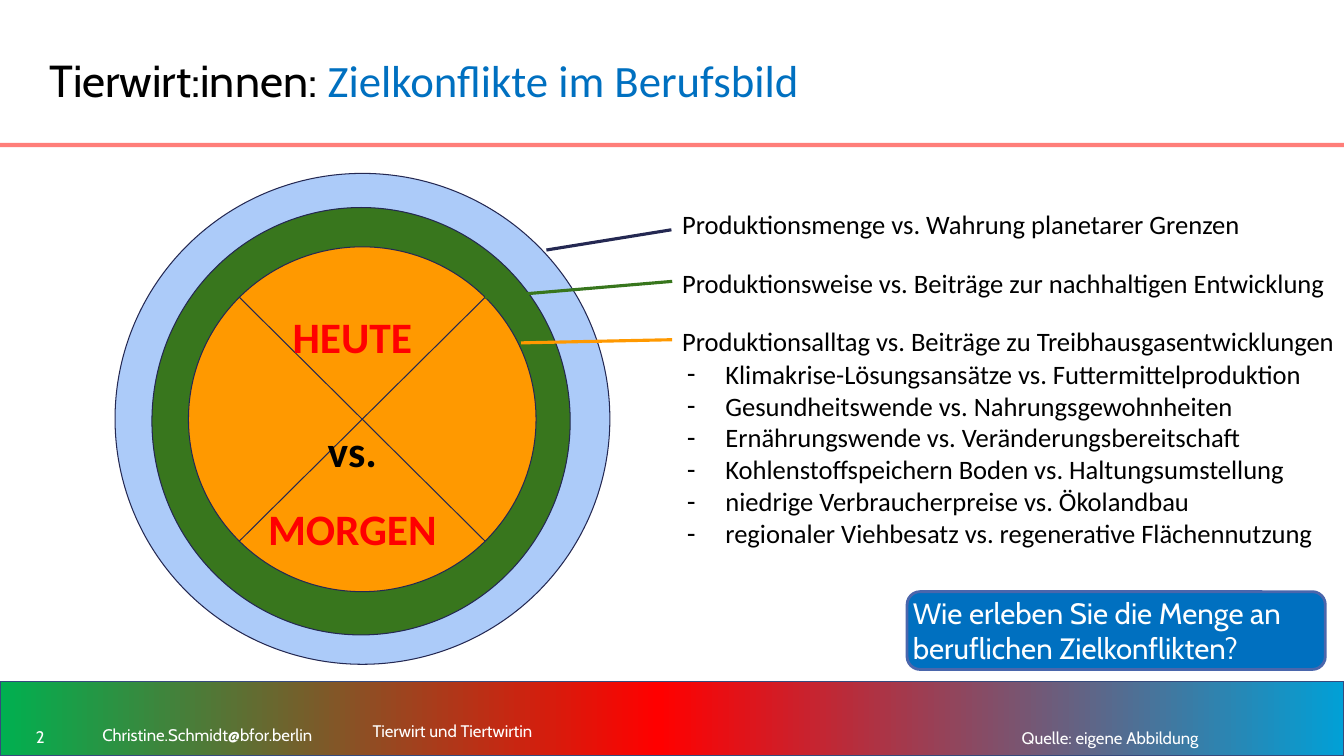
import copy

import pptx
import pptx.dml.color
import pptx.enum.shapes
import pptx.enum.text
import pptx.oxml.ns
import pptx.util
from lxml import etree

Cm = pptx.util.Cm
Pt = pptx.util.Pt
qn = pptx.oxml.ns.qn
FORM = pptx.enum.shapes.MSO_SHAPE
LEFT = pptx.enum.text.PP_ALIGN.LEFT
MID = pptx.enum.text.PP_ALIGN.CENTER
TOP = pptx.enum.text.MSO_ANCHOR.TOP
HALF = pptx.enum.text.MSO_ANCHOR.MIDDLE

TOPICS = [
    "Produktionsmenge vs. Wahrung planetarer Grenzen",
    "Produktionsweise vs. Beiträge zur nachhaltigen Entwicklung",
    "Produktionsalltag vs. Beiträge zu Treibhausgasentwicklungen",
]
GOALS = [
    "Klimakrise-Lösungsansätze vs. Futtermittelproduktion",
    "Gesundheitswende vs. Nahrungsgewohnheiten",
    "Ernährungswende vs. Veränderungsbereitschaft",
    "Kohlenstoffspeichern Boden vs. Haltungsumstellung",
    "niedrige Verbraucherpreise vs. Ökolandbau",
    "regionaler Viehbesatz vs. regenerative Flächennutzung",
]
RAYS = [
    ((13.77, 6.3), (16.92, 5.79), "242852"),
    ((12.22, 7.49), (16.94, 7.09), "38761D"),
    ((13.13, 8.64), (16.94, 8.56), "FF9900"),
]


def tint(code):
    return pptx.dml.color.RGBColor.from_string(code)


def place(item, spot):
    item.left, item.top, item.width, item.height = [Cm(n) for n in spot]


def frame(item, anchor, side=0.25, edge=0.13):
    text = item.text_frame
    text.word_wrap = True
    text.auto_size = pptx.enum.text.MSO_AUTO_SIZE.NONE
    text.vertical_anchor = anchor
    text.margin_left = text.margin_right = Cm(side)
    text.margin_top = text.margin_bottom = Cm(edge)
    return text


def write(para, words, size, font, code, bold=False):
    run = para.add_run()
    run.text = words
    run.font.size = Pt(size)
    run.font.name = font
    run.font.bold = bold
    run.font.color.rgb = tint(code)


def label(slide, spot, words, size, font, code, anchor=HALF, edge=0.13, align=LEFT):
    box = slide.shapes.add_textbox(*[Cm(n) for n in spot])
    para = frame(box, anchor, edge=edge).paragraphs[0]
    para.alignment = align
    write(para, words, size, font, code)
    return para


def shape(slide, form, spot, fill, line=None, width=0.75):
    item = slide.shapes.add_shape(form, *[Cm(n) for n in spot])
    item.shadow.inherit = False
    if fill:
        item.fill.solid()
        item.fill.fore_color.rgb = tint(fill)
    if line:
        item.line.color.rgb = tint(line)
        item.line.width = Pt(width)
    else:
        item.line.fill.background()
    return item


def blend(item, stops):
    item.fill.gradient()
    item.fill.gradient_angle = 0
    group = item._element.spPr.find(".//" + qn("a:gsLst"))
    group.insert(1, copy.deepcopy(group[0]))
    for stop, (place_at, code) in zip(item.fill.gradient_stops, stops):
        stop.position = place_at
        stop.color.rgb = tint(code)


def ray(slide, start, end, code):
    kind = pptx.enum.shapes.MSO_CONNECTOR.STRAIGHT
    line = slide.shapes.add_connector(kind, *[Cm(n) for n in start + end])
    line.line.color.rgb = tint(code)
    line.line.width = Pt(2.25)
    etree.SubElement(line._element.spPr, qn("a:effectLst"))


def dash(para):
    props = para._p.get_or_add_pPr()
    props.set("marL", str(Cm(1.27)))
    props.set("indent", str(-Cm(0.97)))
    etree.SubElement(props, qn("a:buChar")).set("char", "-")


def title(slide):
    head = slide.shapes.title
    place(head, (1, 0.5, 25, 3))
    para = frame(head, HALF).paragraphs[0]
    para.alignment = LEFT
    write(para, "Tierwirt:innen: ", 32, "Cabin", "000000")
    write(para, "Zielkonflikte im Berufsbild", 32, "Calibri", "0070C0")


def goals(slide):
    body = slide.placeholders[1]
    place(body, (16.76, 8.76, 16.61, 5.28))
    text = frame(body, TOP, edge=0.25)
    for rank, words in enumerate(GOALS):
        para = text.add_paragraph() if rank else text.paragraphs[0]
        dash(para)
        para.space_before = Pt(0)
        write(para, words, 19, "Calibri", "000000")


def rings(slide):
    ink = "242852"
    shape(slide, FORM.OVAL, (2.9, 4.37, 12.47, 12.37), "ACCBF9", ink)
    shape(slide, FORM.OVAL, (3.83, 5.23, 10.54, 10.77), "38761D", ink)
    core = shape(slide, FORM.FLOWCHART_SUMMING_JUNCTION,
                 (4.75, 6.22, 8.76, 8.69), "FF9900", ink)
    text = frame(core, HALF, edge=0.25)
    now = text.paragraphs[0]
    then = text.add_paragraph()
    for para in (now, then):
        para.alignment = MID
        para.line_spacing = 1.5
    now._p.get_or_add_pPr().set("marR", str(Cm(0.5)))
    then.space_before = Pt(25)
    write(now, "HEUTE", 31, "Calibri", "FF0000", True)
    write(then, "vs.", 31, "Calibri", "000000", True)
    then.add_line_break()
    write(then, "MORGEN", 31, "Calibri", "FF0000", True)


def ask(slide):
    box = shape(slide, FORM.ROUNDED_RECTANGLE, (22.86, 14.91, 10.54, 1.96),
                "0070C0", "4A66AC", 2)
    para = frame(box, HALF, 0.05, 0).paragraphs[0]
    para.alignment = LEFT
    write(para, "Wie erleben Sie die Menge an beruflichen Zielkonflikten?",
          21, "Cabin", "FFFFFF")


def foot(slide):
    style = (12, "Cabin", "FFFFFF")
    label(slide, (0.15, 18.08, 1.73, 0.97), "2", *style, align=MID)
    mail = label(slide, (2.33, 18.08, 12.32, 0.97),
                 "Christine.Schmidt@bfor.berlin", *style, anchor=TOP, edge=0.25)
    mail.line_spacing = 0.9
    label(slide, (9.14, 17.98, 7.06, 0.89), "Tierwirt und Tiertwirtin", *style)
    note = label(slide, (25.5, 18.08, 7.5, 0.97), "Quelle: eigene Abbildung", *style)
    note.line_spacing = 1.1


def main():
    deck = pptx.Presentation()
    deck.slide_width = Cm(33.87)
    deck.slide_height = Cm(19.05)
    slide = deck.slides.add_slide(deck.slide_layouts[1])
    band = shape(slide, FORM.RECTANGLE, (0, 17.17, 33.87, 1.88), None, "364A7D", 1)
    blend(band, [(0, "00B050"), (0.49, "FF0000"), (1, "01A0D6")])
    shape(slide, FORM.RECTANGLE, (0, 3.6, 33.87, 0.11), "FF7E79")
    title(slide)
    goals(slide)
    ask(slide)
    rings(slide)
    for rank, words in enumerate(TOPICS):
        label(slide, (16.94, 5 + 1.47 * rank, 17.17, 1.22), words,
              19, "Calibri", "000000", TOP, 0.25)
    for start, end, code in RAYS:
        ray(slide, start, end, code)
    foot(slide)
    deck.save("out.pptx")


if __name__ == "__main__":
    main()
